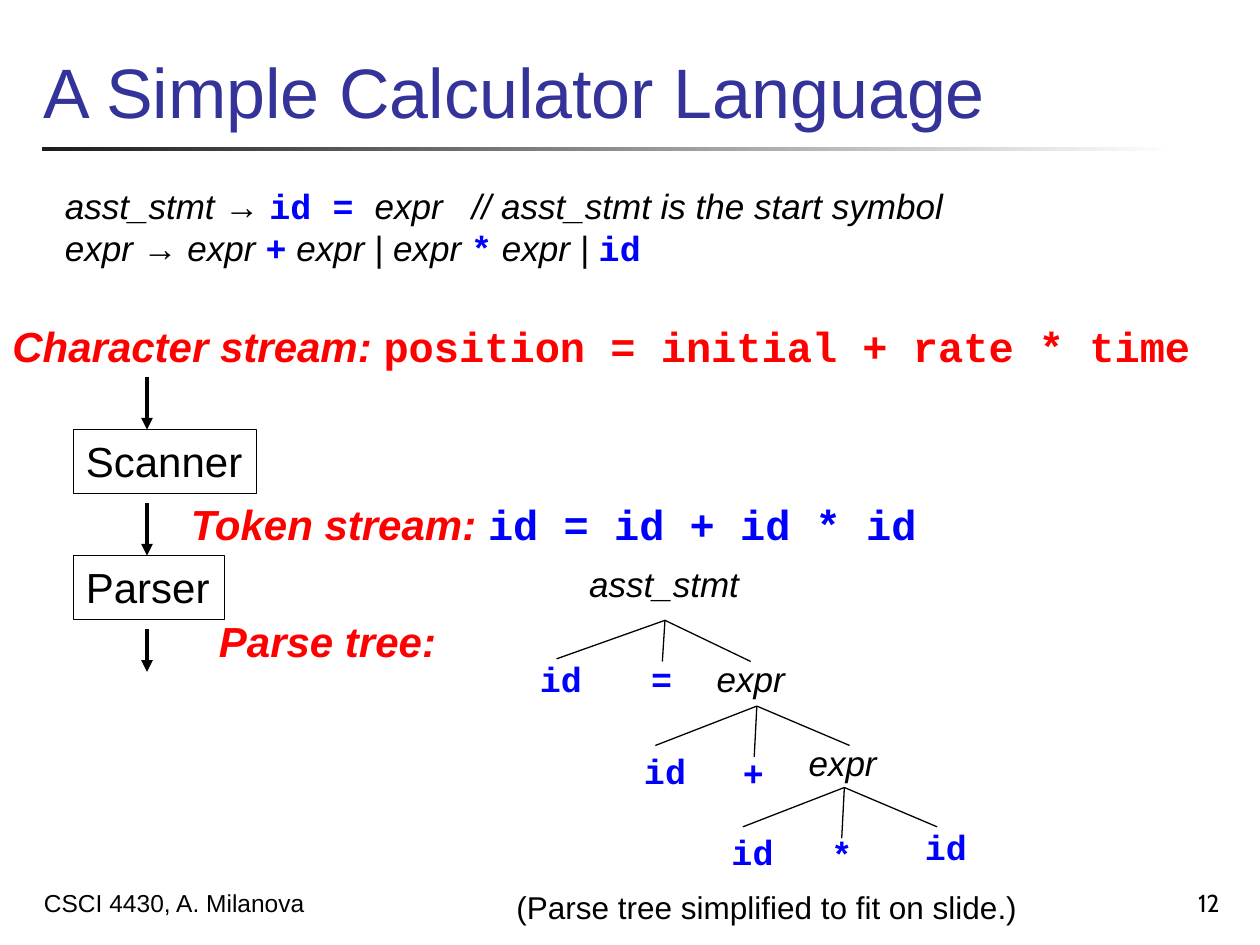
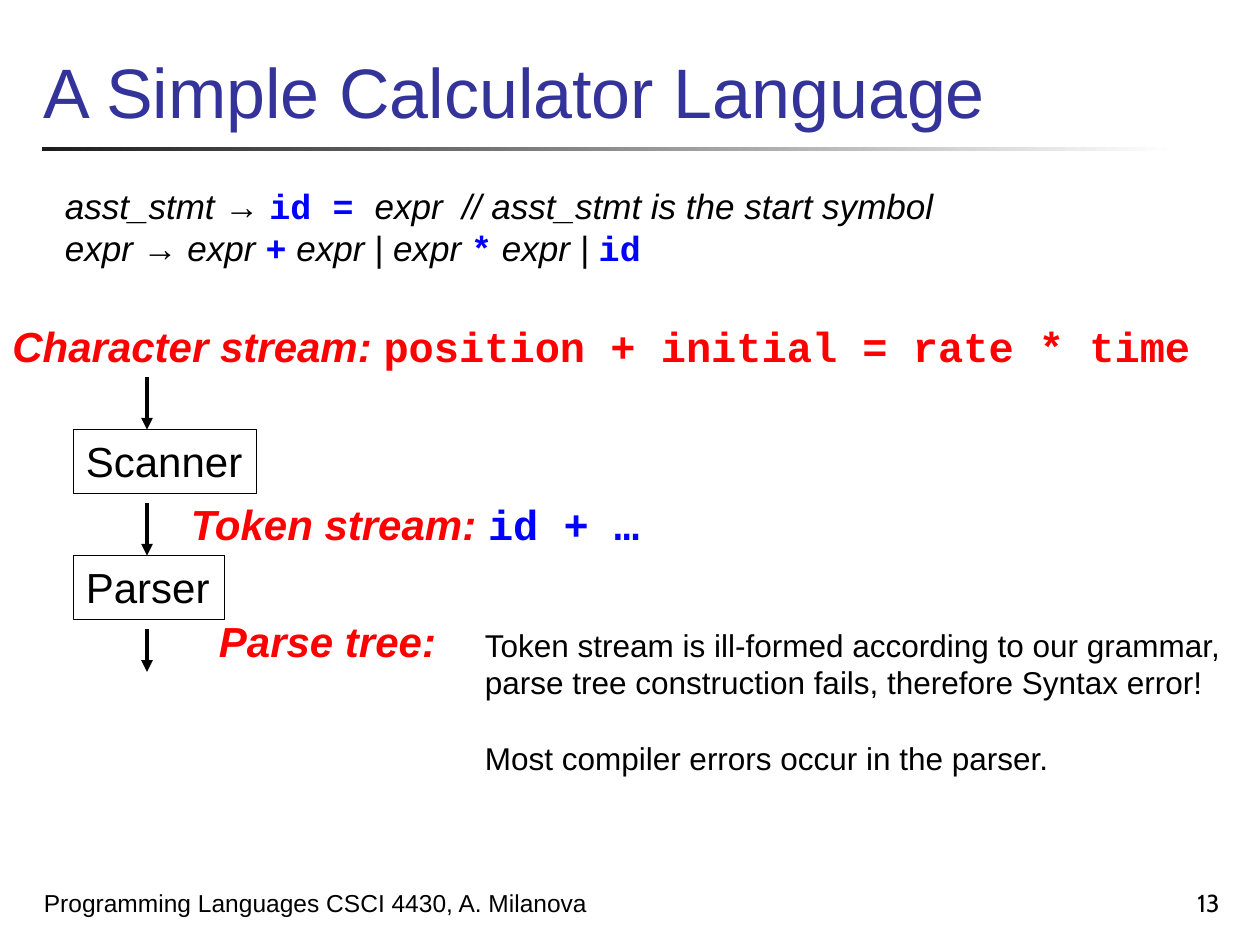
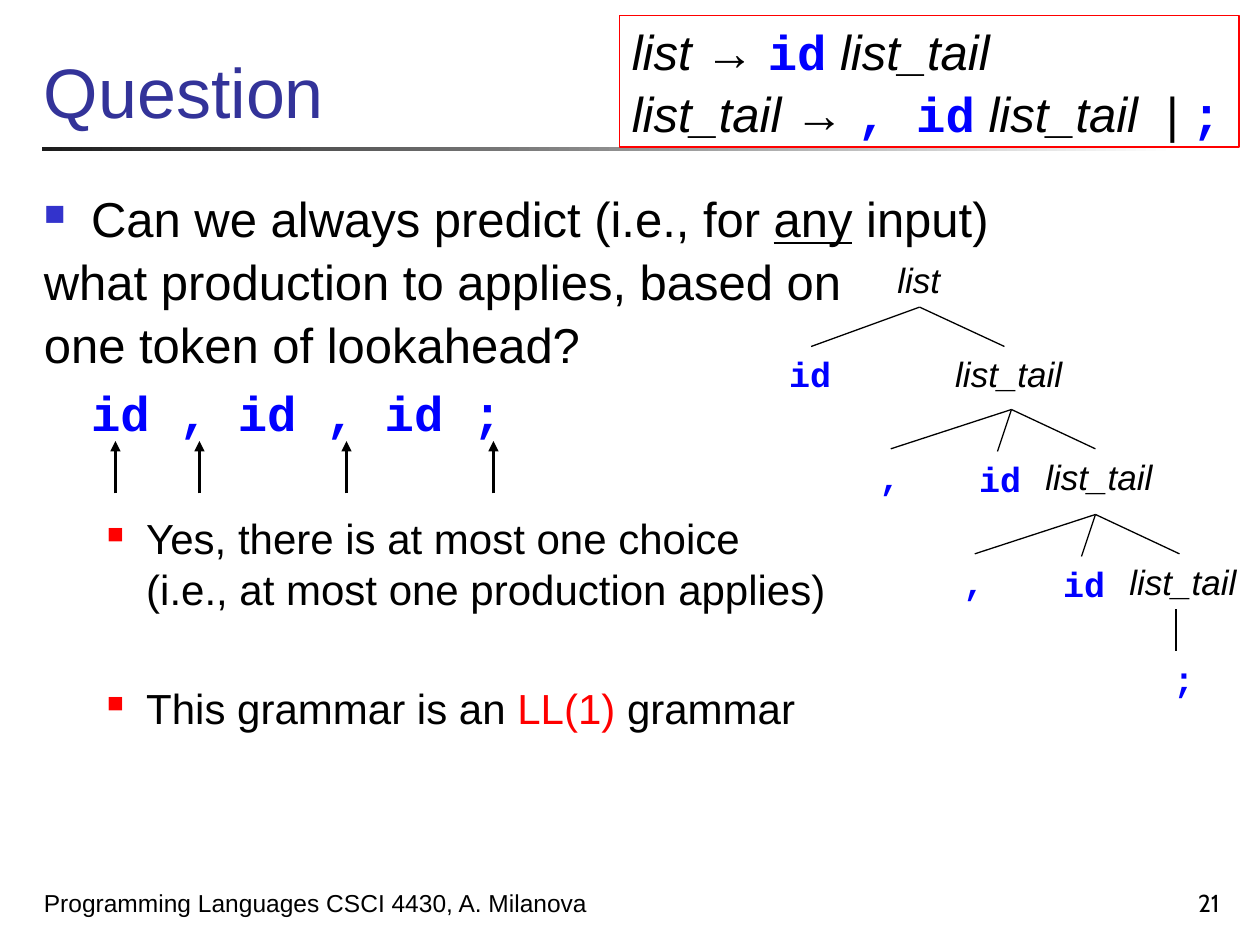
from dataclasses import dataclass

from lxml import etree
from pptx import Presentation
from pptx import util as u
from pptx.dml.color import RGBColor
from pptx.enum import shapes, text
from pptx.oxml import ns

Pt = u.Pt


# Theme: colours, fonts, type sizes and run styles
@dataclass(frozen=True)
class Theme:
    black: str = "000000"
    blue: str = "0000FF"
    red: str = "FF0000"
    navy: str = "333399"
    violet: str = "3333CC"
    dark: str = "1C1C1C"
    white: str = "FFFFFF"
    sans: str = "Arial"
    mono: str = "Courier New"
    number: str = "Cabin"
    title: int = 40
    body: int = 28
    flow: int = 24
    rule: int = 20
    note: int = 18
    foot: int = 14

    def style(self, name):
        """Font, colour, bold, italic, underline."""
        return {
            "plain": (self.sans, self.black, False, False, False),
            "under": (self.sans, self.black, False, False, True),
            "alert": (self.sans, self.red, False, False, False),
            "title": (self.sans, self.navy, False, False, False),
            "page": (self.number, self.black, False, False, False),
            "term": (self.sans, self.black, False, True, False),
            "code": (self.mono, self.blue, True, False, False),
            "label": (self.sans, self.red, True, True, False),
            "input": (self.mono, self.red, True, False, False),
        }[name]


THEME = Theme()


def add_xml(parent, tag, **attrs):
    return etree.SubElement(parent, ns.qn(tag), attrs)


def write(frame, *lines, size, style="plain", align=None, before=0,
          spacing=None, left=0, hang=0, bullet=None):
    """Add paragraphs; a line is a string or a list of (text, style) runs."""
    for line in lines:
        first = frame.paragraphs[0]
        para = frame.add_paragraph() if first.runs else first
        para.alignment = align
        para.space_before = Pt(before)
        para.line_spacing = spacing
        props = para._p.get_or_add_pPr()
        props.set("marL", str(Pt(left)))
        props.set("indent", str(Pt(-hang)))
        if bullet:
            color, scale = bullet
            add_xml(add_xml(props, "a:buClr"), "a:srgbClr", val=color)
            add_xml(props, "a:buSzPct", val=str(scale * 1000))
            add_xml(props, "a:buChar", char="■")
        for words, kind in [(line, style)] if isinstance(line, str) else line:
            for i, part in enumerate(words.split("\n")):
                if i:
                    para.add_line_break()
                run = para.add_run()
                run.text = part
                font = run.font
                font.size = Pt(size)
                (font.name, color, font.bold, font.italic,
                 font.underline) = THEME.style(kind)
                font.color.rgb = RGBColor.from_string(color)


class Deck:
    def __init__(self, theme):
        self.theme = theme
        self.file = Presentation()
        self.file.slide_width, self.file.slide_height = Pt(720), Pt(540)
        self.slide = None

    def start(self, title, footer, page):
        """New slide with title, gradient rule, footer and page number."""
        t = self.theme
        self.slide = self.file.slides.add_slide(self.file.slide_layouts[6])
        bar = self.slide.shapes.add_shape(
            shapes.MSO_SHAPE.RECTANGLE, Pt(24), Pt(84), Pt(648), Pt(2.2))
        bar.shadow.inherit = False
        bar.line.fill.background()
        bar.fill.gradient()
        bar.fill.gradient_angle = 0
        for stop, color in zip(bar.fill.gradient_stops, (t.dark, t.white)):
            stop.color.rgb = RGBColor.from_string(color)
        low = text.MSO_ANCHOR.BOTTOM
        write(self.box(18, 0, 685, 79, anchor=low), title,
              size=t.title, style="title")
        write(self.box(18, 492, 372, 36, anchor=low), footer, size=t.foot)
        write(self.box(554, 492, 150, 36, anchor=low), page, size=t.foot,
              style="page", align=text.PP_ALIGN.RIGHT)

    def box(self, x, y, w, h, wrap=True, anchor=text.MSO_ANCHOR.TOP,
            edge=None):
        """Text box, outlined if an edge colour is given."""
        shape = self.slide.shapes.add_textbox(Pt(x), Pt(y), Pt(w), Pt(h))
        if edge:
            shape.line.color.rgb = RGBColor.from_string(edge)
            shape.line.width = Pt(0.75)
        frame = shape.text_frame
        frame.word_wrap = wrap
        frame.vertical_anchor = anchor
        return frame

    def line(self, x1, y1, x2, y2, width=0.75, arrow=False):
        link = self.slide.shapes.add_connector(
            shapes.MSO_CONNECTOR.STRAIGHT, Pt(x1), Pt(y1), Pt(x2), Pt(y2))
        link.line.color.rgb = RGBColor.from_string(self.theme.black)
        link.line.width = Pt(width)
        props = link._element.spPr
        if arrow:
            add_xml(props.find(ns.qn("a:ln")), "a:tailEnd", type="triangle")
        add_xml(props, "a:effectLst")

    def node(self, label, x, y, style="code"):
        """Tree label centred on x, without side margins."""
        w = 16 + 8 * len(label)
        frame = self.box(x - w / 2, y, w, 32, wrap=False)
        frame.margin_left = frame.margin_right = 0
        write(frame, label, size=self.theme.rule, style=style,
              align=text.PP_ALIGN.CENTER)

    def fan(self, x, y, *feet):
        """Branches from an apex to feet given as offsets."""
        for dx, dy in feet:
            self.line(x, y, x + dx, y + dy)

    def flow(self, source, tokens, gap):
        """Grammar and the scanner-parser pipeline."""
        t = self.theme
        write(self.box(30, 102, 540, 55.5),
              [("asst_stmt → ", "term"), ("id = ", "code"),
               (f"expr{gap}// asst_stmt is the start symbol", "term")],
              [("expr → expr ", "term"), ("+", "code"),
               (" expr | expr ", "term"), ("*", "code"),
               (" expr | ", "term"), ("id", "code")], size=t.rule)
        for i, (name, w) in enumerate([("Scanner", 104.5), ("Parser", 86.5)]):
            write(self.box(42, 245.5 + 72 * i, w, 36.5, wrap=False,
                           edge=t.black), name, size=t.flow)
        for i, drop in enumerate((30, 30, 24.5)):
            top = 215.5 + 72 * i
            self.line(84, top, 84, top + drop, 2.25, arrow=True)
        for x, y, w, runs in [
                (0, 179.5, 700, [("Character stream: ", "label"),
                                 (source, "input")]),
                (102, 281.5, 432, [("Token stream: ", "label"),
                                   (tokens, "code")]),
                (118, 348, 146, [("Parse tree:", "label")])]:
            write(self.box(x, y, w, 36.5, wrap=False), runs, size=t.flow)


def main():
    t = THEME
    deck = Deck(t)
    course = "CSCI 4430, A. Milanova"
    footer = f"Programming Languages {course}"
    topic = "A Simple Calculator Language"

    # Slide 1: well-formed input and its parse tree
    deck.start(topic, course, "12")
    deck.flow("position = initial + rate * time", "id = id + id * id", "   ")
    feet = (-58, 22.5), (-1.5, 29), (53, 22.5)
    deck.fan(380, 354.5, (-62, 22), (-1.5, 23.5), (49, 23.5))
    deck.fan(432.5, 403.5, *feet)
    deck.fan(482.5, 450, *feet)
    for label, x, y in [("id", 320.5, 372), ("=", 378, 372),
                        ("id", 380, 425), ("+", 430.5, 426),
                        ("id", 430, 471), ("*", 481, 472),
                        ("id", 540.5, 468)]:
        deck.node(label, x, y)
    for label, x, y in [("asst_stmt", 379.5, 318), ("expr", 429, 372),
                        ("expr", 481.5, 420)]:
        deck.node(label, x, y, "term")
    write(deck.box(288, 504, 306, 29, wrap=False),
          "(Parse tree simplified to fit on slide.)", size=t.note)

    # Slide 2: ill-formed input
    deck.start(topic, footer, "13")
    deck.flow("position + initial = rate * time", "id + …", "  ")
    note = deck.box(270, 354, 438.5, 94.5, wrap=False)
    write(note, "Token stream is ill-formed according to our grammar,",
          "parse tree construction fails, therefore Syntax error!",
          size=t.note)
    write(note, "Most compiler errors occur in the parser.",
          size=t.note, before=21.5)

    # Slide 3: question and grammar
    deck.start("Question", footer, "21")
    body = deck.box(18, 108, 687, 414)
    write(body, [("Can we always predict (i.e., for ", "plain"),
                 ("any", "under"), (" input)", "plain")],
          size=t.body, before=5.6, spacing=0.9, left=27, hang=27,
          bullet=(t.violet, 60))
    write(body, "what production to applies, based on",
          "one token of lookahead?", size=t.body, before=5.6, spacing=0.9)
    write(body, "id , id , id ;", size=t.body, style="code",
          before=5, left=27)
    point = dict(size=t.flow, left=58.5, hang=22.5, bullet=(t.red, 55))
    write(body, "Yes, there is at most one choice\n"
          "(i.e., at most one production applies)", before=41, **point)
    write(body, [("This grammar is an ", "plain"), ("LL(1)", "alert"),
                 (" grammar", "plain")], before=39, **point)
    grammar = deck.box(354, 9, 354, 75, edge=t.red)
    write(grammar, [("list → ", "term"), ("id", "code"),
                    (" list_tail", "term")], size=t.body)
    write(grammar, [("list_tail → ", "term"), (", id", "code"),
                    (" list_tail  | ", "term"), (";", "code")],
          size=t.body, before=1.5)
    for x in (66, 114, 198, 282):
        deck.line(x, 282, x, 252, 1.25, arrow=True)

    # Slide 3: parse tree, with two equal list_tail levels
    deck.node("list", 525, 144, "term")
    deck.fan(525.5, 175.5, (-62, 22.5), (48.5, 22.5))
    deck.node("id", 463, 198)
    deck.node("list_tail", 576.5, 198, "term")
    for i in range(2):
        dx, dy = 48 * i, 60 * i
        deck.fan(578 + dx, 234 + dy, (-69, 22.5), (-8, 24), (48, 22.5))
        deck.node(",", 508.5 + dx, 256.5 + dy)
        deck.node("id", 571.5 + dx, 258 + dy)
        deck.node("list_tail", 628 + dx, 256.5 + dy, "term")
    deck.line(672, 372, 672, 348)
    deck.node(";", 676.5, 372)

    deck.file.save("out.pptx")


if __name__ == "__main__":
    main()
